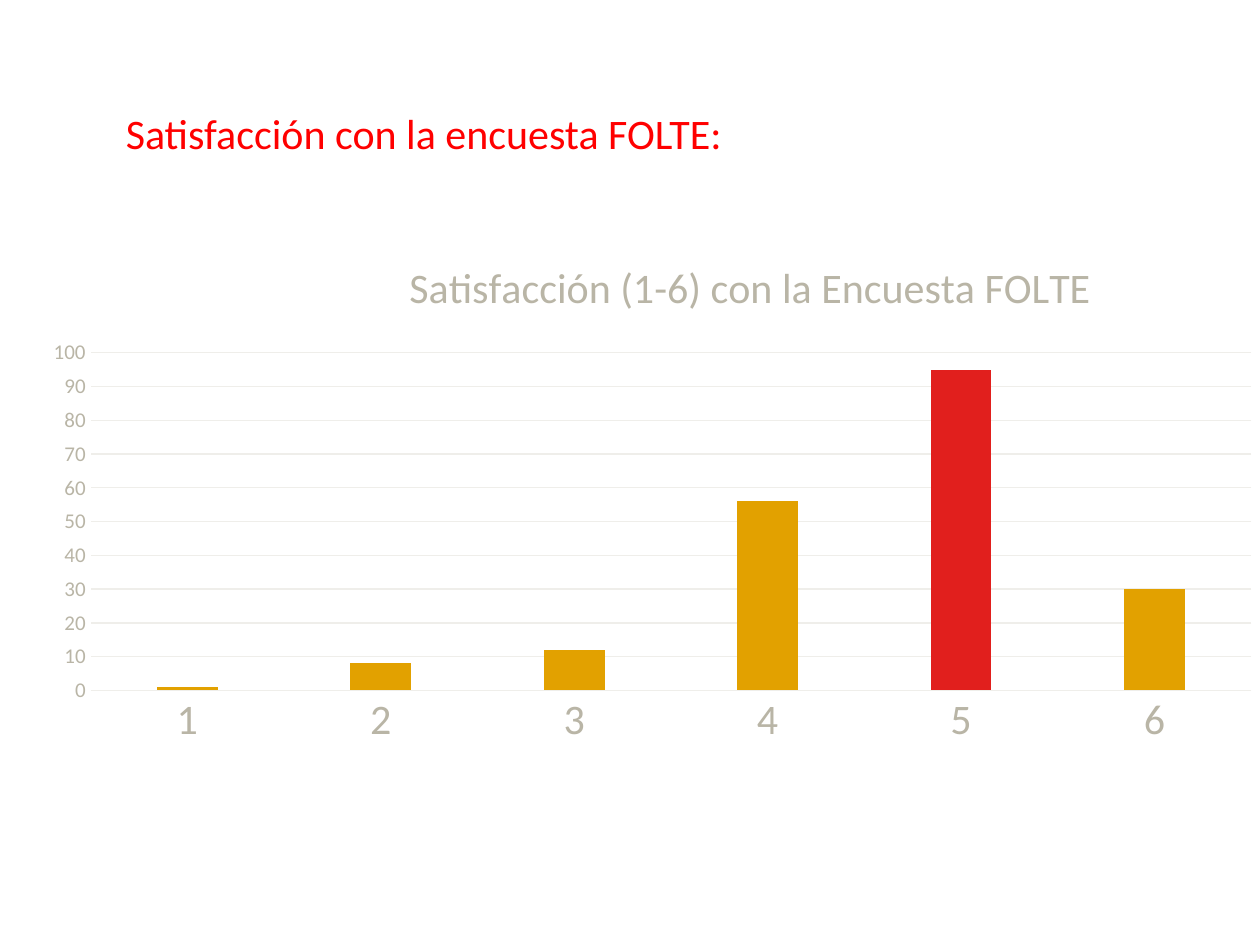
"""Build the slide on satisfaction with the FOLTE survey."""
from lxml.etree import SubElement
from pptx import Presentation
from pptx.chart.data import CategoryChartData
from pptx.dml.color import RGBColor
from pptx.enum.chart import XL_CHART_TYPE as ChartType, XL_TICK_MARK as TickMark
from pptx.oxml.ns import qn
from pptx.util import Inches, Pt

HEADING = "Satisfacción con la encuesta FOLTE:"
CHART_TITLE = "Satisfacción (1-6) con la Encuesta FOLTE"
RATINGS = {"1": 1, "2": 8, "3": 12, "4": 56, "5": 95, "6": 30}
HIGHLIGHT = "5"

FONT = "Calibri"
HEADING_RED = RGBColor(0xFF, 0x00, 0x00)
BAR_GOLD = RGBColor(0xE2, 0xA1, 0x00)
BAR_RED = RGBColor(0xE1, 0x1F, 0x1D)
LABEL_GREY = RGBColor(0xB9, 0xB5, 0xA6)
CHART_GREY = RGBColor(0x93, 0x8D, 0x76)
LINE_GREY = RGBColor(0xEF, 0xEE, 0xEA)


def style_font(font, size, color):
    font.name = FONT
    font.size = Pt(size)
    font.bold = False
    font.color.rgb = color


def style_line(line):
    line.color.rgb = LINE_GREY
    line.width = Pt(0.75)


def fill_bar(bar, color):
    bar.format.fill.solid()
    bar.format.fill.fore_color.rgb = color


def set_layout(layout, **settings):
    for child in list(layout):
        layout.remove(child)
    manual = SubElement(layout, qn("c:manualLayout"))
    for name, value in settings.items():
        SubElement(manual, qn(f"c:{name}")).set("val", str(value))


def add_heading(slide):
    box = slide.shapes.add_textbox(Inches(0.9), Inches(0.8), Inches(8.16), Inches(0.51))
    box.text_frame.word_wrap = True
    paragraph = box.text_frame.paragraphs[0]
    paragraph.text = HEADING
    style_font(paragraph.font, 24, HEADING_RED)


def add_ratings_chart(slide):
    data = CategoryChartData()
    data.categories = list(RATINGS)
    data.add_series("Series 1", list(RATINGS.values()))
    chart = slide.shapes.add_chart(ChartType.COLUMN_CLUSTERED, Inches(0.2), Inches(1.86),
                                   Inches(9.8), Inches(4.56), data).chart
    style_font(chart.font, 10, CHART_GREY)
    chart.has_legend = False

    title = chart.chart_title
    paragraph = title.text_frame.paragraphs[0]
    paragraph.text = CHART_TITLE
    style_font(paragraph.font, 24, LABEL_GREY)
    title.include_in_layout = False
    title_layout = title._element.find(qn("c:layout"))
    if title_layout is None:
        title_layout = title._element.makeelement(qn("c:layout"))
        title._element.find(qn("c:tx")).addnext(title_layout)
    set_layout(title_layout, xMode="edge", yMode="edge", x=0.305, y=0.03)

    plot_area = chart._chartSpace.chart.plotArea
    plot_layout = plot_area.find(qn("c:layout"))
    if plot_layout is None:
        plot_layout = plot_area.makeelement(qn("c:layout"))
        plot_area.insert(0, plot_layout)
    set_layout(plot_layout, layoutTarget="inner", xMode="edge", yMode="edge",
               x=0.053, y=0.206, w=0.94, h=0.588)

    plot = chart.plots[0]
    plot.gap_width, plot.overlap = 219, -27
    plot.vary_by_categories = False
    series = plot.series[0]
    fill_bar(series, BAR_GOLD)
    fill_bar(series.points[list(RATINGS).index(HIGHLIGHT)], BAR_RED)

    for axis, size in ((chart.category_axis, 24), (chart.value_axis, 12)):
        axis.major_tick_mark = axis.minor_tick_mark = TickMark.NONE
        style_font(axis.tick_labels.font, size, LABEL_GREY)
    style_line(chart.category_axis.format.line)
    value_axis = chart.value_axis
    value_axis.format.line.fill.background()
    value_axis.minimum_scale, value_axis.maximum_scale, value_axis.major_unit = 0, 100, 10
    style_line(value_axis.major_gridlines.format.line)


def main():
    presentation = Presentation()
    presentation.slide_width, presentation.slide_height = Inches(10), Inches(7.5)
    slide = presentation.slides.add_slide(presentation.slide_layouts[6])
    add_heading(slide)
    add_ratings_chart(slide)
    presentation.save("out.pptx")


if __name__ == "__main__":
    main()
